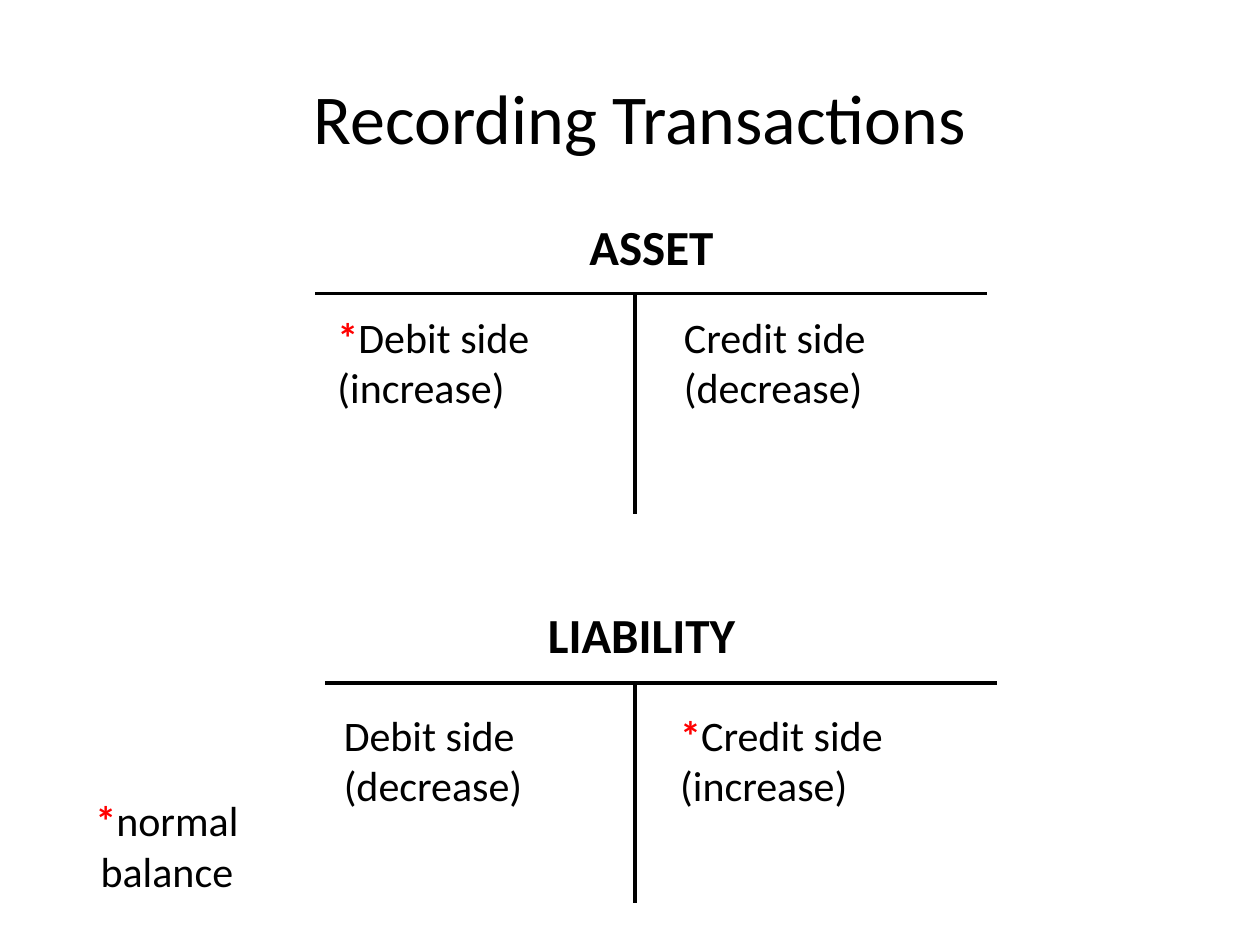
from pptx import Presentation
from pptx.dml.color import RGBColor
from pptx.enum.shapes import MSO_CONNECTOR
from pptx.enum.text import MSO_ANCHOR, PP_ALIGN
from pptx.oxml.ns import qn
from pptx.util import Inches, Pt
from lxml.etree import SubElement

BLACK = RGBColor(0, 0, 0)
RED = RGBColor(255, 0, 0)
FONT = "Calibri"


def place(shape, box):
    shape.left, shape.top, shape.width, shape.height = map(Inches, box)


def write(frame, text, size=24, bold=False, align=PP_ALIGN.LEFT,
          anchor=MSO_ANCHOR.TOP):
    frame.word_wrap = True
    frame.vertical_anchor = anchor
    for i, line in enumerate(text.split("\n")):
        para = frame.paragraphs[0] if i == 0 else frame.add_paragraph()
        para.alignment = align
        star, mark, rest = line.rpartition("*")
        for part, color, heavy in ((mark, RED, True), (rest, BLACK, bold)):
            if part:
                run = para.add_run()
                run.text = part
                run.font.name = FONT
                run.font.size = Pt(size)
                run.font.bold = heavy
                run.font.color.rgb = color


def add_text(slide, box, text, **style):
    shape = slide.shapes.add_textbox(*map(Inches, box))
    write(shape.text_frame, text, **style)


def add_line(slide, *ends):
    line = slide.shapes.add_connector(MSO_CONNECTOR.STRAIGHT,
                                      *map(Inches, ends))
    line.line.color.rgb = BLACK
    line.line.width = Pt(2)
    SubElement(line._element.spPr, qn("a:effectLst"))


def add_title(slide, box, text):
    title = slide.shapes.title
    place(title, box)
    write(title.text_frame, text, size=40, align=PP_ALIGN.CENTER,
          anchor=MSO_ANCHOR.MIDDLE)


def add_account(slide, box, stem, head, sides):
    left, top, width, height = box
    add_line(slide, left, top, left + width, top)
    add_line(slide, stem, top, stem, top + height)
    name, spot = head
    add_text(slide, spot, name, size=28, bold=True)
    for x, y, text in sides:
        add_text(slide, (x, y, 2.29, 0.91), text)


def add_note(slide, box, text):
    add_text(slide, box, text, align=PP_ALIGN.CENTER)


def main():
    deck = Presentation()
    deck.slide_width, deck.slide_height = Inches(10), Inches(7.5)
    slide = deck.slides.add_slide(deck.slide_layouts[5])
    add_title(slide, (0.58, 0.3, 9, 1.25), "Recording Transactions")
    add_account(slide, (2.5, 2.33, 5.33, 1.75), 5.04,
                ("ASSET", (4.58, 1.67, 1.59, 0.57)),
                [(2.58, 2.42, "*Debit side\n(increase)"),
                 (5.33, 2.42, "Credit side\n(decrease)")])
    add_account(slide, (2.58, 5.42, 5.33, 1.75), 5.04,
                ("LIABILITY", (4.25, 4.75, 1.83, 0.57)),
                [(2.63, 5.58, "Debit side\n(decrease)"),
                 (5.3, 5.58, "*Credit side\n(increase)")])
    add_note(slide, (0.49, 6.26, 1.67, 0.91), "*normal balance")
    deck.save("out.pptx")


if __name__ == "__main__":
    main()
